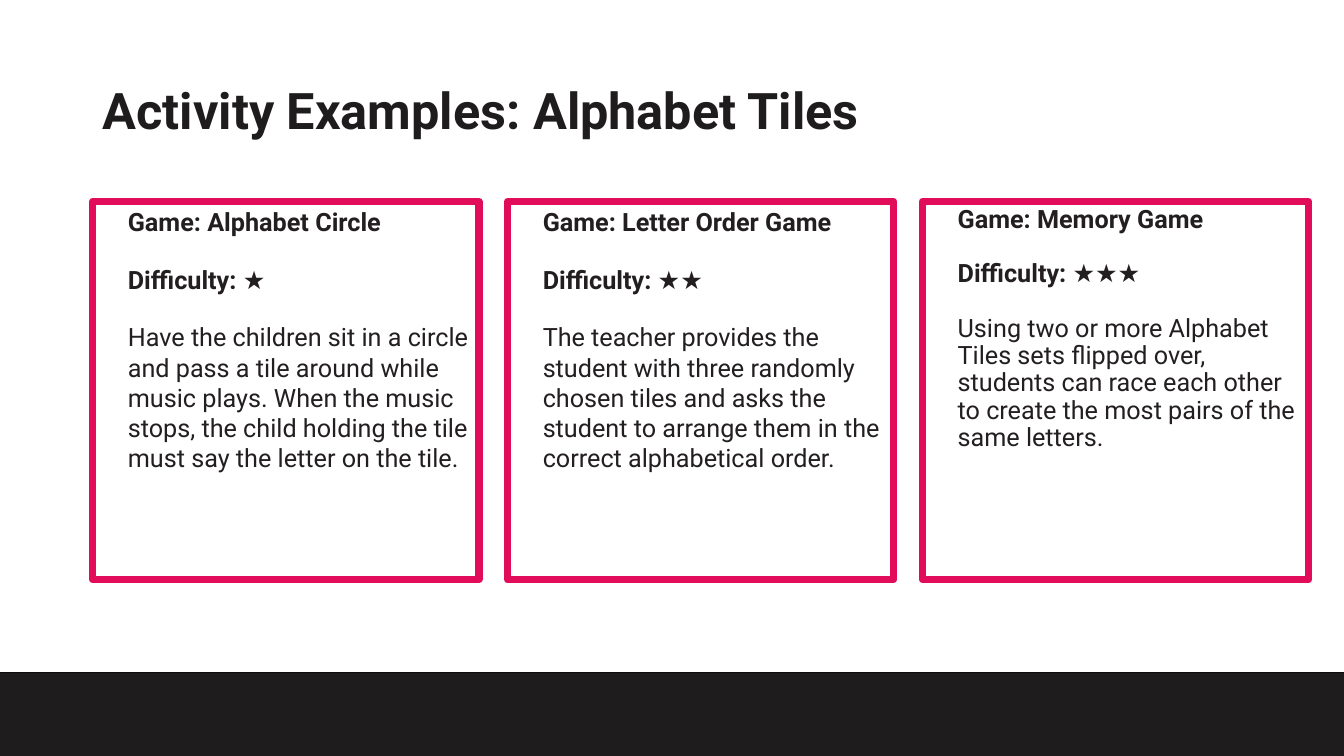
from pptx import Presentation
from pptx.dml.color import RGBColor
from pptx.enum.shapes import MSO_SHAPE
from pptx.enum.text import MSO_ANCHOR, PP_ALIGN
from pptx.util import Inches, Pt

TITLE = "Activity Examples: Alphabet Tiles"
# game, difficulty in stars, description, line spacing
GAMES = [
    ("Alphabet Circle", 1,
     "Have the children sit in a circle and pass a tile around while music plays. "
     "When the music stops, the child holding the tile must say the letter on the tile.",
     1.0),
    ("Letter Order Game", 2,
     "The teacher provides the student with three randomly chosen tiles and asks the "
     "student to arrange them in the correct alphabetical order.",
     1.0),
    ("Memory Game", 3,
     "Using two or more Alphabet Tiles sets flipped over, students can race each other "
     "to create the most pairs of the same letters.",
     0.9),
]
COLORS = {"bar": "1F1C1E", "bar_line": "0E0C0D", "title": "1F1C1E",
          "frame": "E10C5A", "text": "231F20"}
FONT = "Roboto"
CARD_LEFT, CARD_TOP, CARD_WIDTH, CARD_HEIGHT = 0.92, 2, 3.83, 3.75
CARD_STEP = 4.115


def rgb(name):
    return RGBColor.from_string(COLORS[name])


def add_box(slide, left, top, width, height, line, line_width, fill=None):
    box = slide.shapes.add_shape(MSO_SHAPE.RECTANGLE, Inches(left), Inches(top),
                                 Inches(width), Inches(height))
    box.shadow.inherit = False
    if fill:
        box.fill.solid()
        box.fill.fore_color.rgb = rgb(fill)
    else:
        box.fill.background()
    box.line.color.rgb = rgb(line)
    box.line.width = Pt(line_width)
    return box


def write(paragraph, text, *, size, color, bold=False, spacing=1.0, before=0, indent=0):
    paragraph.text = text
    paragraph.alignment = PP_ALIGN.LEFT
    paragraph.line_spacing = spacing
    paragraph.space_before = Pt(before)
    if indent:
        properties = paragraph._p.get_or_add_pPr()
        properties.set("marL", str(Inches(indent)))
        properties.set("indent", "0")
    font = paragraph.runs[0].font
    font.name = FONT
    font.size = Pt(size)
    font.bold = bold
    font.color.rgb = rgb(color)


def add_title(slide):
    title = slide.shapes.add_textbox(Inches(0.92), Inches(0.4), Inches(11.5), Inches(1.45))
    frame = title.text_frame
    frame.word_wrap = True
    frame.vertical_anchor = MSO_ANCHOR.MIDDLE
    write(frame.paragraphs[0], TITLE, size=36, color="title", bold=True, spacing=0.9)


def add_card(slide, left, game, stars, description, spacing):
    card = add_box(slide, left, CARD_TOP, CARD_WIDTH, CARD_HEIGHT, "frame", 5.25)
    frame = card.text_frame
    frame.word_wrap = True
    frame.vertical_anchor = MSO_ANCHOR.TOP
    lines = [(f"Game: {game}", True), (f"Difficulty: {'★' * stars}", True),
             (description, False)]
    for index, (text, bold) in enumerate(lines):
        paragraph = frame.add_paragraph() if index else frame.paragraphs[0]
        write(paragraph, text, size=18, color="text", bold=bold, spacing=spacing,
              before=19.5 if index else 0, indent=0.25)


def main():
    deck = Presentation()
    deck.slide_width, deck.slide_height = Inches(13.33), Inches(7.5)
    slide = deck.slides.add_slide(deck.slide_layouts[6])
    add_box(slide, -0.1, 6.67, 13.55, 0.99, "bar_line", 1, fill="bar")
    add_title(slide)
    for column, game in enumerate(GAMES):
        add_card(slide, CARD_LEFT + column * CARD_STEP, *game)
    deck.save("out.pptx")


if __name__ == "__main__":
    main()
